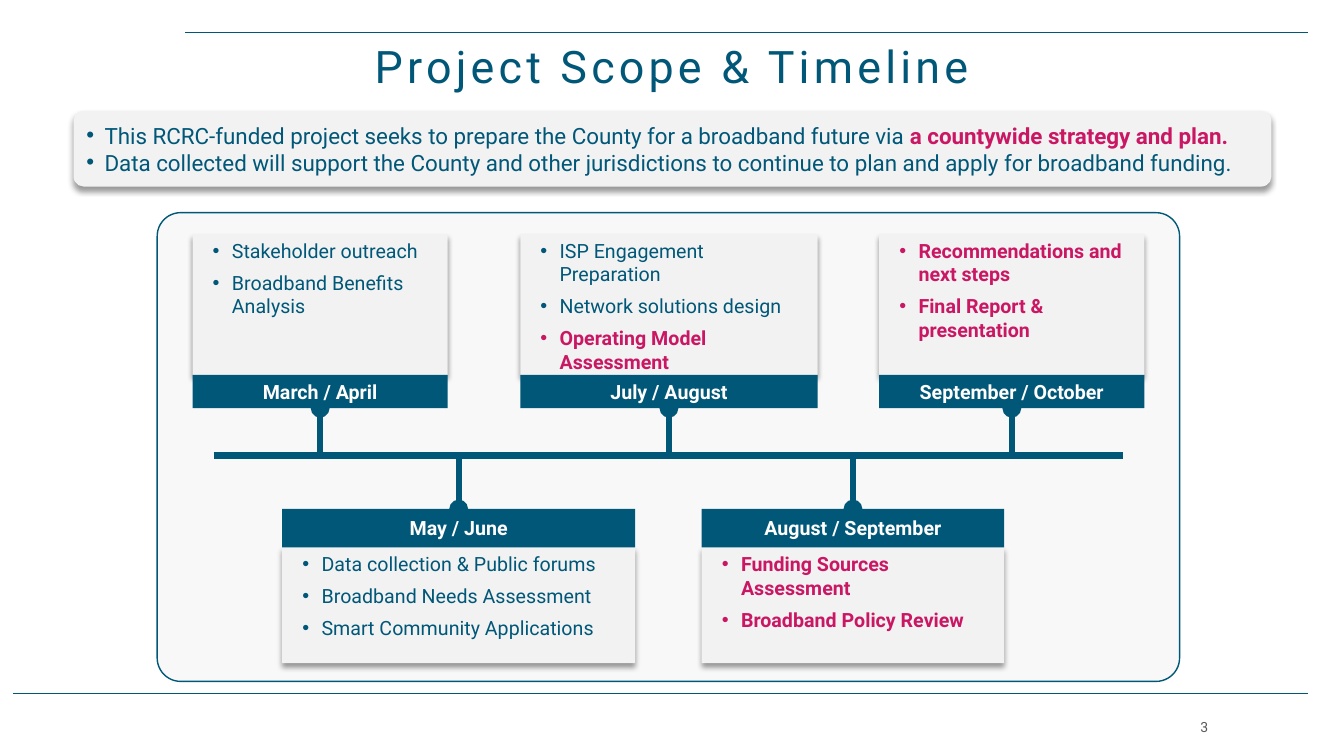
from lxml.etree import SubElement as Sub
from pptx import Presentation
from pptx.dml.color import RGBColor
from pptx.enum.shapes import MSO_CONNECTOR as Link, MSO_SHAPE as Kind
from pptx.enum.text import MSO_ANCHOR as Anchor, PP_ALIGN as Align
from pptx.oxml.ns import qn
from pptx.util import Inches, Pt

WIDE, HIGH = Inches(13.33), Inches(7.5)
TEAL, PINK, PALE, GREY, WHITE = "005778", "CA1764", "F2F2F2", "595959", "FFFFFF"
AXIS = 60.27  # height of the time axis, in percent of the slide

# first column, width, month label, items as (text, stressed)
UPPER = [
    (14.33, 18.98, "March / April",
     [("Stakeholder outreach", False), ("Broadband Benefits Analysis", False)]),
    (38.71, 22.13, "July / August",
     [("ISP Engagement Preparation", False), ("Network solutions design", False),
      ("Operating Model Assessment", True)]),
    (65.42, 19.73, "September / October",
     [("Recommendations and next steps", True), ("Final Report & presentation", True)]),
]
LOWER = [
    (21, 26.26, "May / June",
     [("Data collection & Public forums", False), ("Broadband Needs Assessment", False),
      ("Smart Community Applications", False)]),
    (52.21, 22.51, "August / September",
     [("Funding Sources Assessment", True), ("Broadband Policy Review", True)]),
]
NOTES = [
    [("This RCRC-funded project seeks to prepare the County for a broadband future via ", False),
     ("a countywide strategy and plan.", True)],
    [("Data collected will support the County and other jurisdictions to continue to plan "
      "and apply for broadband funding.", False)],
]


def across(share):
    return round(WIDE * share / 100)


def down(share):
    return round(HIGH * share / 100)


def scale(box):
    """Turn left, top, width, height in percent into slide lengths."""
    x, y, w, h = box
    return across(x), down(y), across(w), down(h)


def paint(target, color):
    """Colour a fill or a font."""
    if hasattr(target, "solid"):
        target.solid()
        target.fore_color.rgb = RGBColor.from_string(color)
    else:
        target.color.rgb = RGBColor.from_string(color)


def shade(shape):
    """Give a shape a soft shadow straight below it."""
    fx = shape._element.spPr.find(qn("a:effectLst"))
    drop = Sub(fx, qn("a:outerShdw"), blurRad=str(Pt(4)), dist=str(Pt(3)),
               dir="5400000", algn="t", rotWithShape="0")
    tone = Sub(drop, qn("a:srgbClr"), val="000000")
    Sub(tone, qn("a:alpha"), val="40000")


def block(slide, box, fill, kind=Kind.RECTANGLE, shadow=False):
    shape = slide.shapes.add_shape(kind, *scale(box))
    shape.shadow.inherit = False
    paint(shape.fill, fill)
    shape.line.fill.background()
    if shadow:
        shade(shape)
    return shape


def line(slide, start, end, width, dot=False):
    link = slide.shapes.add_connector(Link.STRAIGHT, across(start[0]), down(start[1]),
                                      across(end[0]), down(end[1]))
    paint(link.line.fill, TEAL)
    link.line.width = Pt(width)
    if dot:
        Sub(link.line._get_or_add_ln(), qn("a:headEnd"), type="oval")
    Sub(link._element.spPr, qn("a:effectLst"))
    return link


def style(run, size, color, bold=False):
    run.font.name = "Roboto"
    run.font.size = Pt(size)
    run.font.bold = bold
    paint(run.font, color)


def label(shape, text, size, color, align, bold=False, anchor=Anchor.MIDDLE):
    frame = shape.text_frame
    frame.word_wrap = True
    frame.vertical_anchor = anchor
    frame.text = text
    para = frame.paragraphs[0]
    para.alignment = align
    style(para.runs[0], size, color, bold)
    return para


def bullets(shape, rows, size, indent, after, anchor):
    """Fill a shape with bulleted rows, each a list of (text, stressed)."""
    frame = shape.text_frame
    frame.word_wrap = True
    frame.vertical_anchor = anchor
    for i, row in enumerate(rows):
        para = frame.add_paragraph() if i else frame.paragraphs[0]
        para.alignment = Align.LEFT
        para.space_after = Pt(after)
        props = para._p.get_or_add_pPr()
        props.set("marL", str(Inches(indent)))
        props.set("indent", str(-Inches(indent)))
        Sub(props, qn("a:buFont"), typeface="Arial")
        Sub(props, qn("a:buChar"), char="•")
        for text, stress in row:
            run = para.add_run()
            run.text = text
            style(run, size, PINK if stress else TEAL, stress)


def card(slide, box, head, month, items, above):
    """Draw a period: its stem to the axis, its items and its month bar."""
    x, y, w, h = box
    mid = x + w / 2
    edge = y + h if above else y
    stem = line(slide, (mid, edge), (mid, AXIS), 4.5, dot=True)
    body = block(slide, (x, y if above else y + head, w, h - head), PALE, shadow=True)
    body.text_frame.margin_left = Inches(0.2)
    bullets(body, [[item] for item in items], 14, 0.19, 6, Anchor.TOP)
    bar = block(slide, (x, y + h - head if above else y, w, head), TEAL)
    label(bar, month, 14, WHITE, Align.CENTER, bold=True)
    stem.begin_connect(bar, 2 if above else 0)


def heading(slide, box):
    title = slide.shapes.add_textbox(*scale(box))
    para = label(title, "Project Scope & Timeline", 32, TEAL, Align.CENTER,
                 anchor=Anchor.BOTTOM)
    para.line_spacing = 0.8
    para.runs[0].font._element.set("spc", "300")


def summary(slide, box):
    note = block(slide, box, PALE, Kind.ROUNDED_RECTANGLE, shadow=True)
    note.adjustments[0] = 0.13
    bullets(note, NOTES, 16, 0.18, 0, Anchor.MIDDLE)


def timeline(slide, box):
    panel = block(slide, box, PALE, Kind.ROUNDED_RECTANGLE)
    panel.adjustments[0] = 0.05
    tone = panel._element.spPr.find(qn("a:solidFill"))[0]
    Sub(tone, qn("a:alpha"), val="50000")
    paint(panel.line.fill, TEAL)
    panel.line.width = Pt(1)
    x, y, w, h = box
    line(slide, (x + 4.2, AXIS), (x + w - 4.2, AXIS), 4.5)
    for left, width, month, items in UPPER:
        card(slide, (left, y + 2.8, width, 23.07), 4.4, month, items, True)
    for left, width, month, items in LOWER:
        card(slide, (left, y + 39.2, width, 20.4), 5.07, month, items, False)


def footer(slide, box):
    number = slide.shapes.add_textbox(*scale(box))
    label(number, "3", 10, GREY, Align.RIGHT)


def main():
    deck = Presentation()
    deck.slide_width, deck.slide_height = WIDE, HIGH
    slide = deck.slides.add_slide(deck.slide_layouts[6])
    paint(slide.background.fill, WHITE)
    line(slide, (13.8, 4.27), (97.3, 4.27), 1)
    line(slide, (0.98, 91.73), (97.3, 91.73), 1)
    heading(slide, (0, 4.8, 100, 8))
    timeline(slide, (11.7, 28.13, 76.07, 62))
    summary(slide, (5.48, 14.67, 89.12, 10))
    footer(slide, (80.65, 94.13, 9.98, 4))
    deck.save("out.pptx")


if __name__ == "__main__":
    main()
